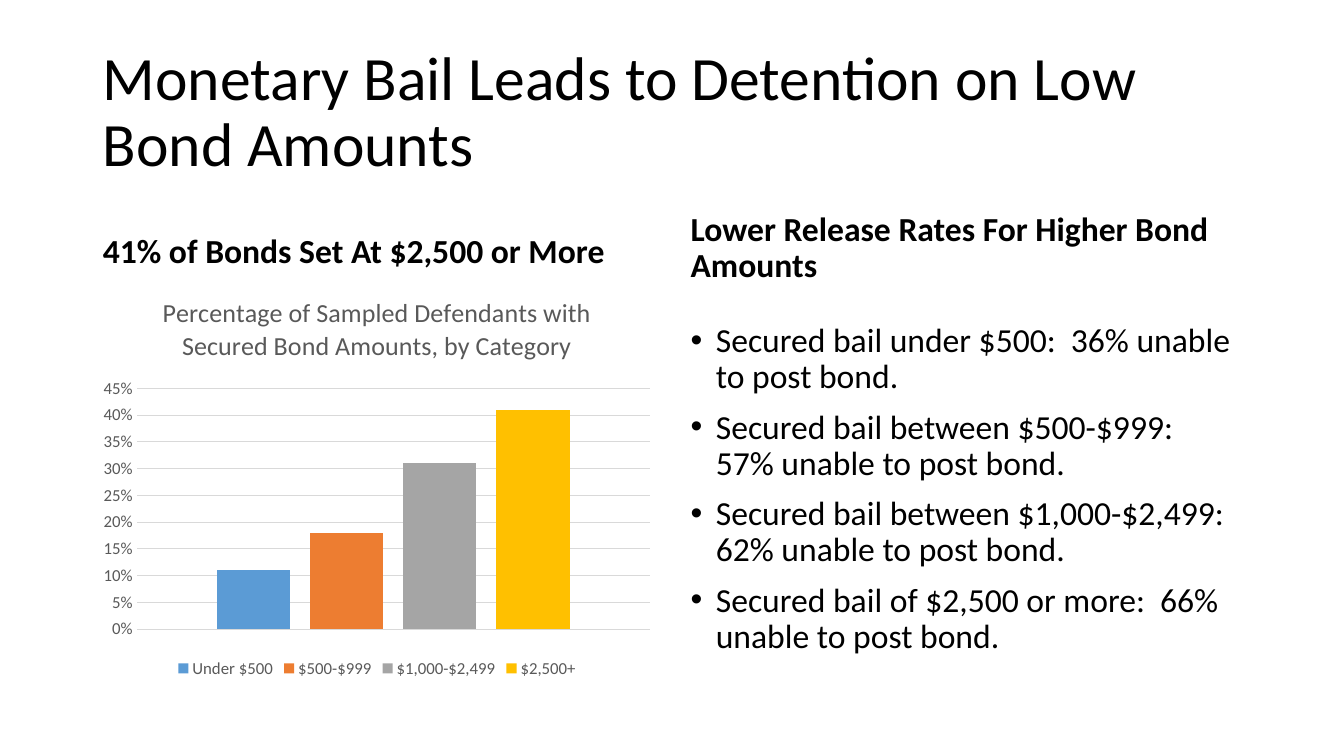
from dataclasses import dataclass

from lxml.etree import SubElement
from pptx import Presentation
from pptx.chart.data import CategoryChartData
from pptx.dml.color import RGBColor
from pptx.enum.chart import XL_CHART_TYPE, XL_LEGEND_POSITION, XL_TICK_MARK
from pptx.enum.text import MSO_ANCHOR, MSO_AUTO_SIZE, PP_ALIGN
from pptx.oxml.ns import qn
from pptx.util import Inches, Pt

HEADLINE = "Monetary Bail Leads to Detention on Low Bond Amounts"
BONDS_HEADING = "41% of Bonds Set At $2,500 or More"
RELEASE_HEADING = "Lower Release Rates For Higher Bond Amounts"
RELEASE_RATES = [
    "Secured bail under $500:  36% unable to post bond.",
    "Secured bail between $500-$999:  57% unable to post bond.",
    "Secured bail between $1,000-$2,499:  62% unable to post bond.",
    "Secured bail of $2,500 or more:  66% unable to post bond.",
]
CHART_TITLE = "Percentage of Sampled Defendants with Secured Bond Amounts, by Category"
BOND_SHARES = {
    "Under $500": (0.11, "5B9BD5"),
    "$500-$999": (0.18, "ED7D31"),
    "$1,000-$2,499": (0.31, "A5A5A5"),
    "$2,500+": (0.41, "FFC000"),
}


@dataclass(frozen=True)
class Theme:
    font: str = "Calibri"
    ink: str = "000000"
    muted: str = "595959"
    grid: str = "D9D9D9"
    headline: float = 44
    body: float = 24
    chart_title: float = 18.6
    chart_label: float = 12


THEME = Theme()
LEFT, RIGHT = 0.92, 6.75
LEFT_WIDTH, RIGHT_WIDTH = 5.64, 5.67
HEADING_HEIGHT, CONTENT_HEIGHT = 0.9, 4.03
BULLET_INDENT = 0.25
PLOT_AREA = {"x": 0.077, "y": 0.276, "w": 0.903, "h": 0.593}


def style_font(font, size, color, bold=False):
    formats = {"name": THEME.font, "size": Pt(size), "bold": bold}
    for attribute, value in formats.items():
        setattr(font, attribute, value)
    font.color.rgb = RGBColor.from_string(color)


def fill_placeholder(holder, box, lines, size, anchor, before=10, bold=False, bullets=False):
    for side, length in zip(("left", "top", "width", "height"), box):
        setattr(holder, side, Inches(length))
    frame = holder.text_frame
    frame.text = "\n".join(lines)
    frame.auto_size = MSO_AUTO_SIZE.NONE
    frame.word_wrap = True
    frame.vertical_anchor = anchor
    formats = {"alignment": PP_ALIGN.LEFT, "line_spacing": 0.9, "space_before": Pt(before)}
    for paragraph in frame.paragraphs:
        for attribute, value in formats.items():
            setattr(paragraph, attribute, value)
        for run in paragraph.runs:
            style_font(run.font, size, THEME.ink, bold)
        if bullets:
            properties = paragraph._p.get_or_add_pPr()
            properties.set("marL", str(Inches(BULLET_INDENT)))
            properties.set("indent", str(-Inches(BULLET_INDENT)))
            SubElement(properties, qn("a:buFont"), typeface="Arial")
            SubElement(properties, qn("a:buChar"), char="•")


def place_plot_area(chart):
    """Fix the inner plot area as fractions of the chart."""
    plot_area = chart._chartSpace.chart.plotArea
    layout = plot_area.find(qn("c:layout"))
    if layout is None:
        layout = SubElement(plot_area, qn("c:layout"))
        plot_area.insert(0, layout)
    manual = SubElement(layout, qn("c:manualLayout"))
    settings = {"layoutTarget": "inner", "xMode": "edge", "yMode": "edge", **PLOT_AREA}
    for tag, value in settings.items():
        SubElement(manual, qn(f"c:{tag}"), val=str(value))


def add_bond_chart(slide, box):
    shares = CategoryChartData(number_format="0%")
    shares.categories = ["1"]
    for amount, (share, _) in BOND_SHARES.items():
        shares.add_series(amount, [share])
    chart = slide.shapes.add_chart(
        XL_CHART_TYPE.COLUMN_CLUSTERED, *map(Inches, box), shares
    ).chart
    style_font(chart.font, THEME.chart_label, THEME.muted)

    chart.has_title = True
    title = chart.chart_title
    title.include_in_layout = False
    title.text_frame.text = CHART_TITLE
    style_font(title.text_frame.paragraphs[0].runs[0].font, THEME.chart_title, THEME.muted)

    chart.has_legend = True
    chart.legend.position = XL_LEGEND_POSITION.BOTTOM
    chart.legend.include_in_layout = False
    style_font(chart.legend.font, THEME.chart_label, THEME.muted)

    chart.category_axis.visible = False
    axis = chart.value_axis
    formats = {
        "minimum_scale": 0,
        "maximum_scale": 0.45,
        "major_unit": 0.05,
        "major_tick_mark": XL_TICK_MARK.NONE,
        "minor_tick_mark": XL_TICK_MARK.NONE,
        "has_major_gridlines": True,
    }
    for attribute, value in formats.items():
        setattr(axis, attribute, value)
    axis.format.line.fill.background()
    axis.major_gridlines.format.line.width = Pt(0.75)
    axis.major_gridlines.format.line.color.rgb = RGBColor.from_string(THEME.grid)
    axis.tick_labels.number_format = "0%"
    axis.tick_labels.number_format_is_linked = False
    style_font(axis.tick_labels.font, THEME.chart_label, THEME.muted)

    columns = chart.plots[0]
    columns.gap_width = 219
    columns.overlap = -27
    columns.vary_by_categories = False
    for series, (_, color) in zip(columns.series, BOND_SHARES.values()):
        series.format.fill.solid()
        series.format.fill.fore_color.rgb = RGBColor.from_string(color)
    place_plot_area(chart)


def main():
    deck = Presentation()
    deck.slide_width, deck.slide_height = Inches(13.33), Inches(7.5)
    slide = deck.slides.add_slide(deck.slide_layouts.get_by_name("Comparison"))
    headline, bonds_heading, chart_slot, release_heading, release_rates = slide.placeholders
    chart_slot.element.getparent().remove(chart_slot.element)

    fill_placeholder(headline, (LEFT, 0.4, 11.5, 1.45), [HEADLINE],
                     THEME.headline, MSO_ANCHOR.MIDDLE, before=0)
    fill_placeholder(bonds_heading, (LEFT, 1.84, LEFT_WIDTH, HEADING_HEIGHT),
                     [BONDS_HEADING], THEME.body, MSO_ANCHOR.BOTTOM, bold=True)
    add_bond_chart(slide, (LEFT, 2.74, LEFT_WIDTH, CONTENT_HEIGHT))
    fill_placeholder(release_heading, (RIGHT, 1.98, RIGHT_WIDTH, HEADING_HEIGHT),
                     [RELEASE_HEADING], THEME.body, MSO_ANCHOR.BOTTOM, bold=True)
    fill_placeholder(release_rates, (RIGHT, 3.16, RIGHT_WIDTH, CONTENT_HEIGHT),
                     RELEASE_RATES, THEME.body, MSO_ANCHOR.TOP, bullets=True)
    deck.save("out.pptx")


if __name__ == "__main__":
    main()
